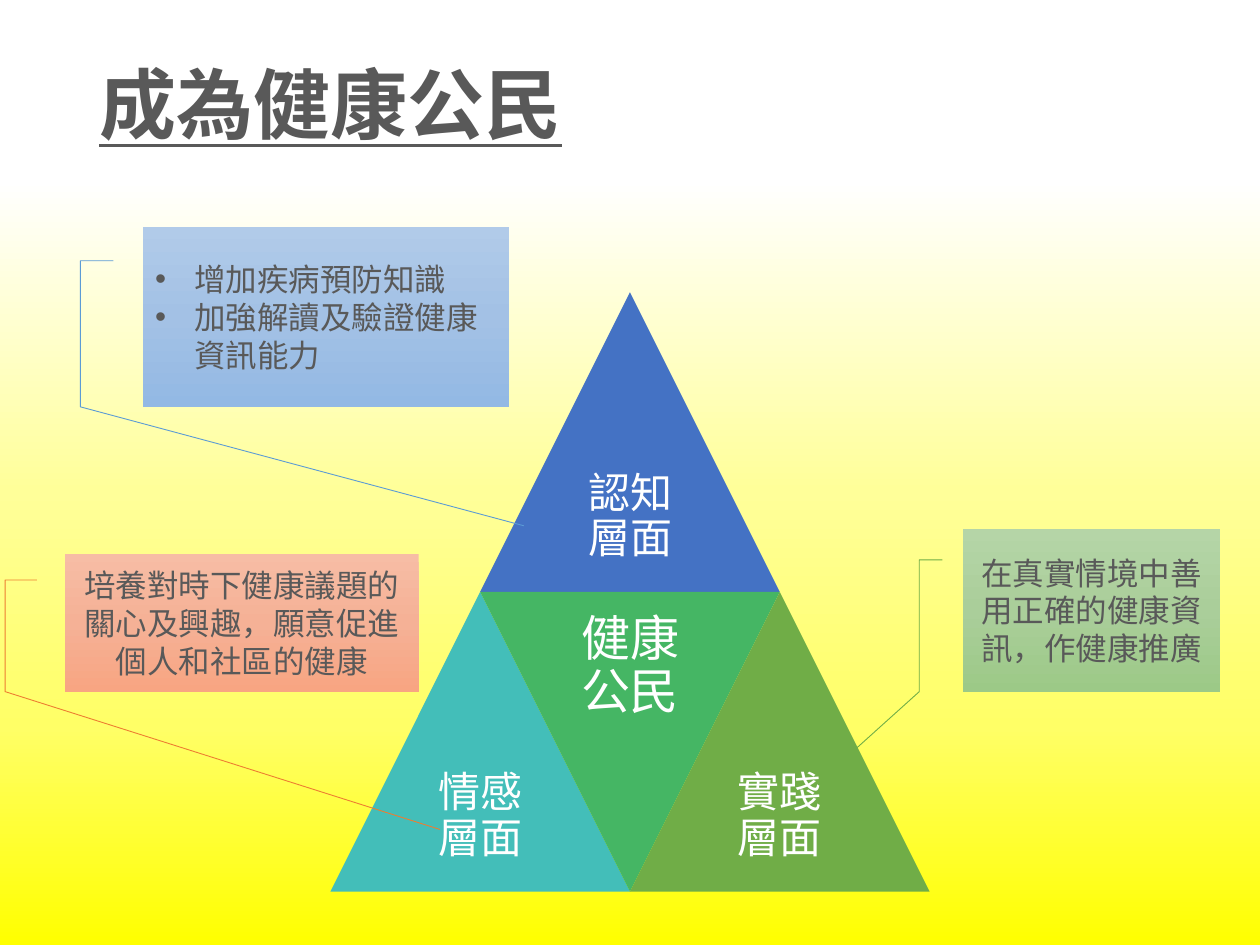
from dataclasses import dataclass

from lxml import etree
from pptx import Presentation
from pptx.dml.color import RGBColor
from pptx.enum import shapes as s, text as t
from pptx.oxml.ns import qn
from pptx.util import Pt


@dataclass(frozen=True)
class Theme:
    face: str = "Noto Sans CJK SC"
    dark: str = "595959"
    white: str = "FFFFFF"
    head: int = 44
    core: int = 28
    label: int = 24
    note: int = 18
    back: tuple = ((19, "FFFFFF"), (52, "FFFF99"), (77, "FFFF66"), (100, "FFFF00"))
    know: str = "4472C4"
    feel: str = "43BEB9"
    hub: str = "45B664"
    act: str = "70AD47"
    blue: tuple = ("5B9BD5", ((0, "B1CBE9"), (50, "A3C1E5"), (100, "93B9E4")))
    green: tuple = ("70AD47", ((0, "B5D5A7"), (50, "AACE9A"), (100, "9CC987")))
    red: tuple = ("ED7D31", ((0, "F7BDA5"), (50, "F5B196"), (100, "F8A582")))


THEME = Theme()


def rgb(code):
    return RGBColor.from_string(code)


def place(box):
    return [Pt(v) for v in box]


def shade(fill, root, stops):
    """Fill top to bottom with (percent, colour) stops; root holds the fill."""
    fill.gradient()
    fill.gradient_angle = 270
    ramp = next(root.iter(qn("a:gsLst")))
    for old in list(ramp):
        ramp.remove(old)
    for pos, code in stops:
        stop = etree.SubElement(ramp, qn("a:gs"), pos=str(pos * 1000))
        etree.SubElement(stop, qn("a:srgbClr"), val=code)


def style(para, size, color, align, space=1.0):
    para.alignment = align
    para.line_spacing = space
    font = para.font
    font.name, font.size = THEME.face, Pt(size)
    font.color.rgb = rgb(color)
    props = para._p.pPr.find(qn("a:defRPr"))
    etree.SubElement(props, qn("a:ea"), typeface=THEME.face)
    return font


def bullet(para, dent):
    props = para._p.get_or_add_pPr()
    props.set("marL", str(Pt(dent)))
    props.set("indent", str(-Pt(dent)))
    etree.SubElement(props, qn("a:buFont"), typeface="Arial")
    etree.SubElement(props, qn("a:buChar"), char="•")


def title(slide, box, words):
    shape = slide.shapes.title
    shape.left, shape.top, shape.width, shape.height = place(box)
    frame = shape.text_frame
    frame.text = words
    frame.auto_size = t.MSO_AUTO_SIZE.NONE
    frame.vertical_anchor = t.MSO_ANCHOR.MIDDLE
    font = style(frame.paragraphs[0], THEME.head, THEME.dark, t.PP_ALIGN.LEFT, 0.9)
    font.bold = font.underline = True


def tile(group, box, words, fill, size, inset, flip=False):
    """Triangle with its label in the wide half."""
    left, top, side, _ = box
    shape = group.shapes.add_shape(s.MSO_SHAPE.ISOSCELES_TRIANGLE, *place(box))
    shape.shadow.inherit = False
    shape.fill.solid()
    shape.fill.fore_color.rgb = rgb(fill)
    shape.line.fill.background()
    shape.rotation = 180 if flip else 0

    half = side / 2
    drop = 0 if flip else half
    label = group.shapes.add_textbox(*place((left + side / 4, top + drop, half, half)))
    frame = label.text_frame
    frame.word_wrap = True
    frame.vertical_anchor = t.MSO_ANCHOR.MIDDLE
    frame.margin_left = frame.margin_right = Pt(inset)
    frame.margin_top = frame.margin_bottom = Pt(inset)
    frame.text = words
    style(frame.paragraphs[0], size, THEME.white, t.PP_ALIGN.CENTER, 0.9)


def pyramid(slide, box):
    left, top, width, _ = box
    side = width / 2
    group = slide.shapes.add_group_shape()
    # column and row are counted in half widths of the whole
    for col, row, words, fill, flip in (
        (0.5, 0, "認知層面", THEME.know, False),
        (0, 1, "情感層面", THEME.feel, False),
        (0.5, 1, "健康公民", THEME.hub, True),
        (1, 1, "實踐層面", THEME.act, False),
    ):
        spot = (left + col * side, top + row * side, side, side)
        size, inset = (THEME.core, 8.6) if flip else (THEME.label, 7.2)
        tile(group, spot, words, fill, size, inset, flip)


def callout(slide, box, lines, look, tip, dots=False):
    """Note with a bent leader; tip is (down, across) as shares of the box."""
    edge, stops = look
    shape = slide.shapes.add_shape(s.MSO_SHAPE.LINE_CALLOUT_3_NO_BORDER, *place(box))
    shape.shadow.inherit = False
    bends = (0.19, -0.08, 0.19, -0.17, 1, -0.17)
    for i, share in enumerate(bends + tip):
        shape.adjustments[i] = share
    shade(shape.fill, shape._element, stops)
    shape.line.color.rgb = rgb(edge)
    shape.line.width = Pt(0.5)
    frame = shape.text_frame
    frame.word_wrap = True
    frame.vertical_anchor = t.MSO_ANCHOR.MIDDLE
    frame.text = "\n".join(lines)
    align = t.PP_ALIGN.LEFT if dots else t.PP_ALIGN.CENTER
    for para in frame.paragraphs:
        if dots:
            bullet(para, 22.5)
        style(para, THEME.note, THEME.dark, align)


def main():
    deck = Presentation()
    deck.slide_width, deck.slide_height = Pt(720), Pt(540)
    slide = deck.slides.add_slide(deck.slide_layouts[5])
    shade(slide.background.fill, slide._element, THEME.back)

    title(slide, (49.5, 10, 621, 104.5), "成為健康公民")
    pyramid(slide, (188.75, 167, 342.5, 342.5))
    callout(slide, (81.5, 129.5, 209.5, 103),
            ["增加疾病預防知識", "加強解讀及驗證健康資訊能力"],
            THEME.blue, (1.66, 1.04), dots=True)
    callout(slide, (550.25, 302.25, 147, 93),
            ["在真實情境中善用正確的健康資訊，作健康推廣"],
            THEME.green, (1.47, -0.5))
    callout(slide, (37.25, 316.5, 202, 78.75),
            ["培養對時下健康議題的關心及興趣，願意促進個人和社區的健康"],
            THEME.red, (2, 1.06))
    deck.save("out.pptx")


if __name__ == "__main__":
    main()
